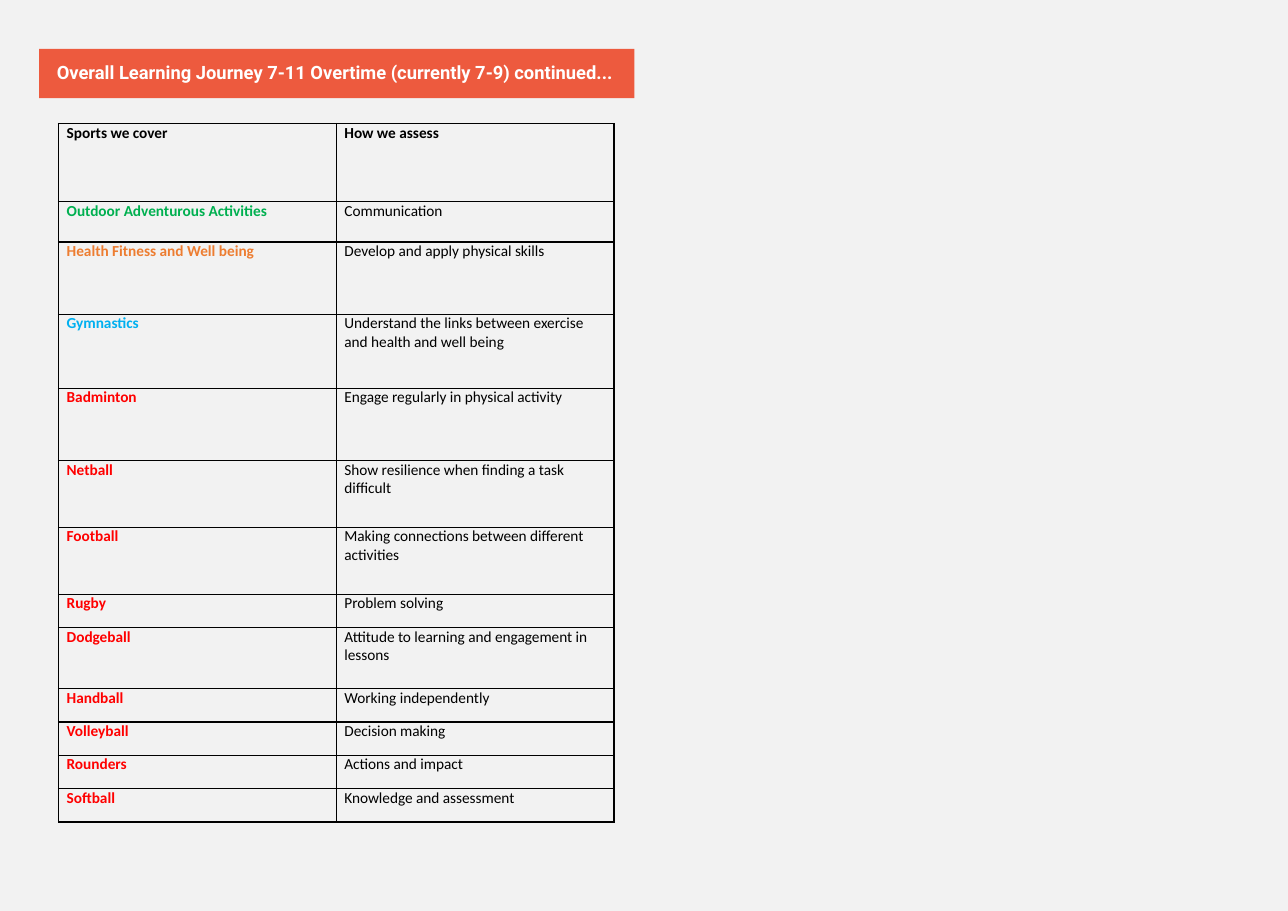
from lxml.etree import SubElement
from pptx import Presentation
from pptx.dml.color import RGBColor
from pptx.enum.text import MSO_ANCHOR, MSO_AUTO_SIZE, PP_ALIGN
from pptx.oxml.ns import qn
from pptx.util import Pt

BLACK, RED = "000000", "FF0000"

# Sport, its colour, what is assessed, row height
ROWS = [
    ("Sports we cover", BLACK, "How we assess", 51),
    ("Outdoor Adventurous Activities", "00B050", "Communication", 26.5),
    ("Health Fitness and Well being", "ED7D31",
     "Develop and apply physical skills", 47.3),
    ("Gymnastics", "00B0F0",
     "Understand the links between exercise and health and well being", 48.2),
    ("Badminton", RED, "Engage regularly in physical activity", 47.3),
    ("Netball", RED, "Show resilience when finding a task difficult", 43.7),
    ("Football", RED, "Making connections between different activities", 43.7),
    ("Rugby", RED, "Problem solving", 21.8),
    ("Dodgeball", RED, "Attitude to learning and engagement in lessons", 40),
    ("Handball", RED, "Working independently", 21.8),
    ("Volleyball", RED, "Decision making", 21.8),
    ("Rounders", RED, "Actions and impact", 21.8),
    ("Softball", RED, "Knowledge and assessment", 21.8),
]


def paint(fill, color):
    fill.solid()
    fill.fore_color.rgb = RGBColor.from_string(color)


def write(frame, text, font="Calibri", size=10, color=BLACK, bold=False, space=1.0):
    par = frame.paragraphs[0]
    par.alignment = PP_ALIGN.LEFT
    par.line_spacing = space
    run = par.add_run()
    run.text = text
    run.font.name = font
    run.font.size = Pt(size)
    run.font.bold = bold
    paint(run.font.fill, color)


class Page:
    back = "F2F2F2"
    accent = "ED5A3E"

    def __init__(self, deck):
        self.slide = deck.slides.add_slide(deck.slide_layouts[5])
        paint(self.slide.background.fill, self.back)

    def title(self, text, left, top, width, height):
        box = self.slide.shapes.title
        box.left, box.top = Pt(left), Pt(top)
        box.width, box.height = Pt(width), Pt(height)
        paint(box.fill, self.accent)
        frame = box.text_frame
        frame.word_wrap = True
        frame.auto_size = MSO_AUTO_SIZE.NONE
        frame.vertical_anchor = MSO_ANCHOR.MIDDLE
        frame.margin_left, frame.margin_right = Pt(11.5), Pt(7.2)
        frame.margin_top = frame.margin_bottom = Pt(3.6)
        write(frame, text, font="Roboto", size=12, color="FFFFFF", bold=True, space=0.9)

    def table(self, rows, left, top, width):
        high = sum(row[-1] for row in rows)
        grid = self.slide.shapes.add_table(
            len(rows), 2, Pt(left), Pt(top), Pt(width), Pt(high)).table
        grid.first_row = grid.horz_banding = False
        for num, (sport, color, skill, height) in enumerate(rows):
            grid.rows[num].height = Pt(height)
            self.cell(grid.cell(num, 0), sport, color=color, bold=True)
            self.cell(grid.cell(num, 1), skill, bold=num == 0)

    def cell(self, cell, text, **style):
        cell.margin_left = cell.margin_right = Pt(5.4)
        cell.margin_top = cell.margin_bottom = 0
        self.border(cell)
        cell.fill.background()
        write(cell.text_frame, text, **style)

    def border(self, cell):
        props = cell._tc.get_or_add_tcPr()
        for side in "LRTB":
            line = SubElement(props, qn(f"a:ln{side}"), w=str(Pt(1)))
            fill = SubElement(line, qn("a:solidFill"))
            SubElement(fill, qn("a:srgbClr"), val=BLACK)


def main():
    deck = Presentation()
    deck.slide_width, deck.slide_height = Pt(841.68), Pt(595.44)
    page = Page(deck)

    # Heading band
    page.title("Overall Learning Journey 7-11 Overtime (currently 7-9) continued...",
               25.6, 31.9, 389, 32.2)

    # Sports and assessment
    page.table(ROWS, 38.2, 80.8, 363)

    deck.save("out.pptx")


if __name__ == "__main__":
    main()
